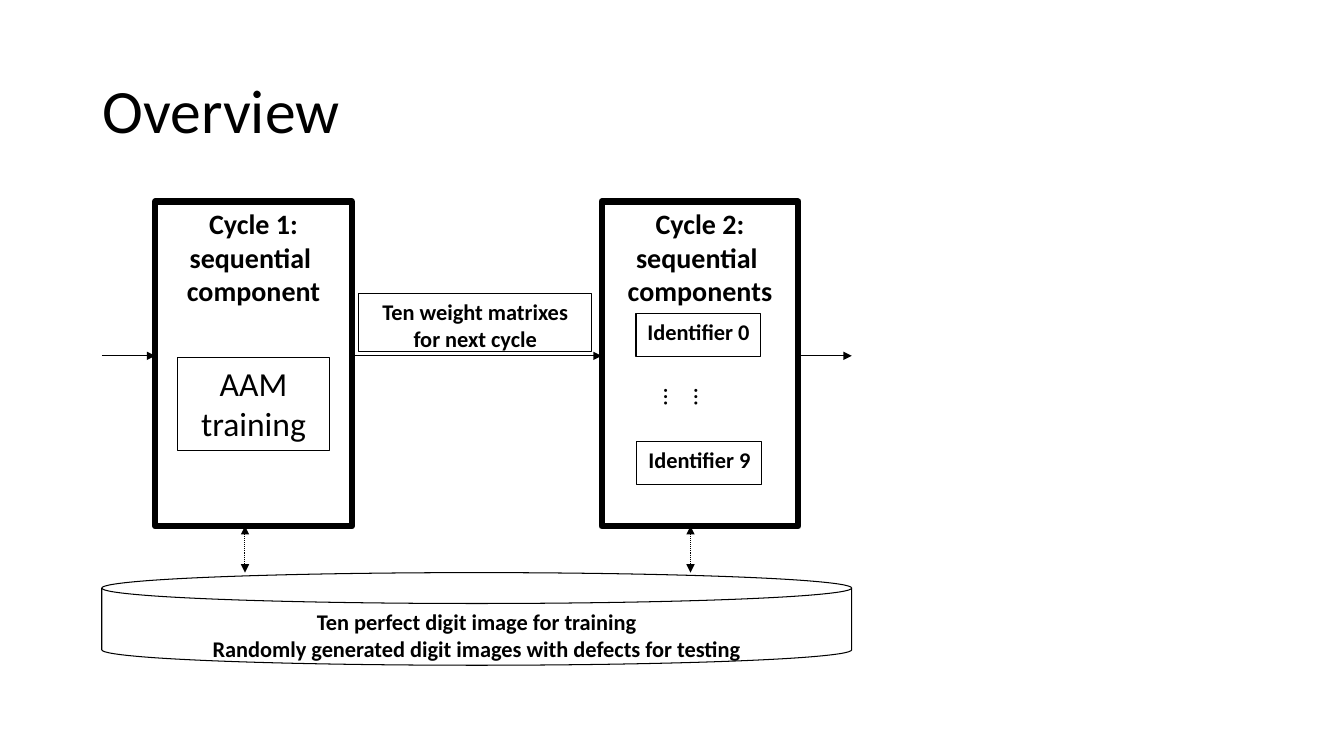
from dataclasses import dataclass

from lxml.etree import SubElement
from pptx import Presentation
from pptx.dml.color import RGBColor
from pptx.enum.dml import MSO_LINE
from pptx.enum.shapes import MSO_CONNECTOR, MSO_SHAPE
from pptx.enum.text import MSO_ANCHOR, MSO_AUTO_SIZE, PP_ALIGN
from pptx.oxml.ns import qn
from pptx.slide import Slide
from pptx.text.text import TextFrame
from pptx.util import Pt

BLACK = RGBColor(0, 0, 0)
WHITE = RGBColor(255, 255, 255)
FONT = "Calibri"
THIN = 0.75


@dataclass
class Box:
    left: float
    top: float
    width: float
    height: float
    lines: list[str]
    size: float = 16
    bold: bool = True
    border: float = THIN
    side: float = 7.2
    kind: MSO_SHAPE = MSO_SHAPE.RECTANGLE


@dataclass
class Arrow:
    left: float
    top: float
    right: float
    bottom: float
    double: bool = False


CYCLE_TOP, CYCLE_WIDTH, CYCLE_HEIGHT = 144, 140.4, 231.84
FIRST, SECOND = 110.9, 429.8
FLOOR = CYCLE_TOP + CYCLE_HEIGHT
DISK_LEFT, DISK_TOP, DISK_WIDTH = 72.7, 409, 535.7
FLOW = 254.2


def cycle(left: float, lines: list[str]) -> Box:
    return Box(left, CYCLE_TOP, CYCLE_WIDTH, CYCLE_HEIGHT, lines,
               size=20, border=4.5, side=0)


def label(left: float, top: float, digit: int) -> Box:
    return Box(left, top, 89.3, 31, [f"Identifier {digit}"])


BACK = [
    cycle(FIRST, ["Cycle 1:", "sequential ", "component"]),
    Box(126.7, 255.6, 108.7, 66.2, ["AAM", "training"], size=24, bold=False),
    cycle(SECOND, ["Cycle 2:", "sequential ", "components"]),
    label(454.3, 223.9, 0),
]
ARROWS = [
    Arrow(FIRST + CYCLE_WIDTH, FLOW, SECOND, FLOW),
    Arrow(SECOND + CYCLE_WIDTH, FLOW, DISK_LEFT + DISK_WIDTH, FLOW),
    Arrow(DISK_LEFT, FLOW, FIRST, FLOW),
    Arrow(493.2, FLOOR, 493.2, DISK_TOP, double=True),
    Arrow(175, FLOOR, 175, DISK_TOP, double=True),
]
FRONT = [
    Box(DISK_LEFT, DISK_TOP, DISK_WIDTH, 66.2,
        ["Ten perfect digit image for training",
         "Randomly generated digit images with defects for testing"],
        kind=MSO_SHAPE.FLOWCHART_MAGNETIC_DISK),
    label(455, 315.4, 9),
    Box(256.3, 209.5, 166.3, 41.8, ["Ten weight matrixes for next cycle"]),
]


def write(frame: TextFrame, lines: list[str], size: float,
          bold: bool = False, align: PP_ALIGN = PP_ALIGN.LEFT) -> None:
    frame.word_wrap = True
    for index, line in enumerate(lines):
        para = frame.add_paragraph() if index else frame.paragraphs[0]
        para.text = line
        para.alignment = align
        para.font.name = FONT
        para.font.size = Pt(size)
        para.font.bold = bold
        para.font.color.rgb = BLACK


def draw_box(slide: Slide, box: Box) -> None:
    shape = slide.shapes.add_shape(box.kind, Pt(box.left), Pt(box.top),
                                   Pt(box.width), Pt(box.height))
    shape.shadow.inherit = False
    shape.fill.solid()
    shape.fill.fore_color.rgb = WHITE
    shape.line.color.rgb = BLACK
    shape.line.width = Pt(box.border)
    frame = shape.text_frame
    frame.vertical_anchor = MSO_ANCHOR.TOP
    frame.margin_left = frame.margin_right = Pt(box.side)
    write(frame, box.lines, box.size, box.bold, PP_ALIGN.CENTER)


def draw_arrow(slide: Slide, arrow: Arrow) -> None:
    link = slide.shapes.add_connector(
        MSO_CONNECTOR.STRAIGHT, Pt(arrow.left), Pt(arrow.top),
        Pt(arrow.right), Pt(arrow.bottom))
    link.line.color.rgb = BLACK
    link.line.width = Pt(THIN)
    ends = ["a:tailEnd"]
    if arrow.double:
        link.line.dash_style = MSO_LINE.ROUND_DOT
        ends.insert(0, "a:headEnd")
    props = link.element.spPr
    for end in ends:
        SubElement(props.find(qn("a:ln")), qn(end), type="triangle")
    SubElement(props, qn("a:effectLst"))


def add_title(slide: Slide) -> None:
    frame = slide.shapes.add_textbox(
        Pt(66.2), Pt(28.8), Pt(828), Pt(104.4)).text_frame
    frame.vertical_anchor = MSO_ANCHOR.MIDDLE
    write(frame, ["Overview"], 44)
    frame.paragraphs[0].line_spacing = 0.9


def add_dots(slide: Slide) -> None:
    shape = slide.shapes.add_textbox(Pt(481.7), Pt(270.7), Pt(36), Pt(35.3))
    frame = shape.text_frame
    write(frame, ["……"], 18)
    frame.auto_size = MSO_AUTO_SIZE.SHAPE_TO_FIT_TEXT
    shape.element.txBody.find(qn("a:bodyPr")).set("vert", "eaVert")


def main() -> None:
    deck = Presentation()
    deck.slide_width, deck.slide_height = Pt(960), Pt(540)
    slide = deck.slides.add_slide(deck.slide_layouts[6])
    add_title(slide)
    for box in BACK:
        draw_box(slide, box)
    for arrow in ARROWS:
        draw_arrow(slide, arrow)
    for box in FRONT:
        draw_box(slide, box)
    add_dots(slide)
    deck.save("out.pptx")


if __name__ == "__main__":
    main()
